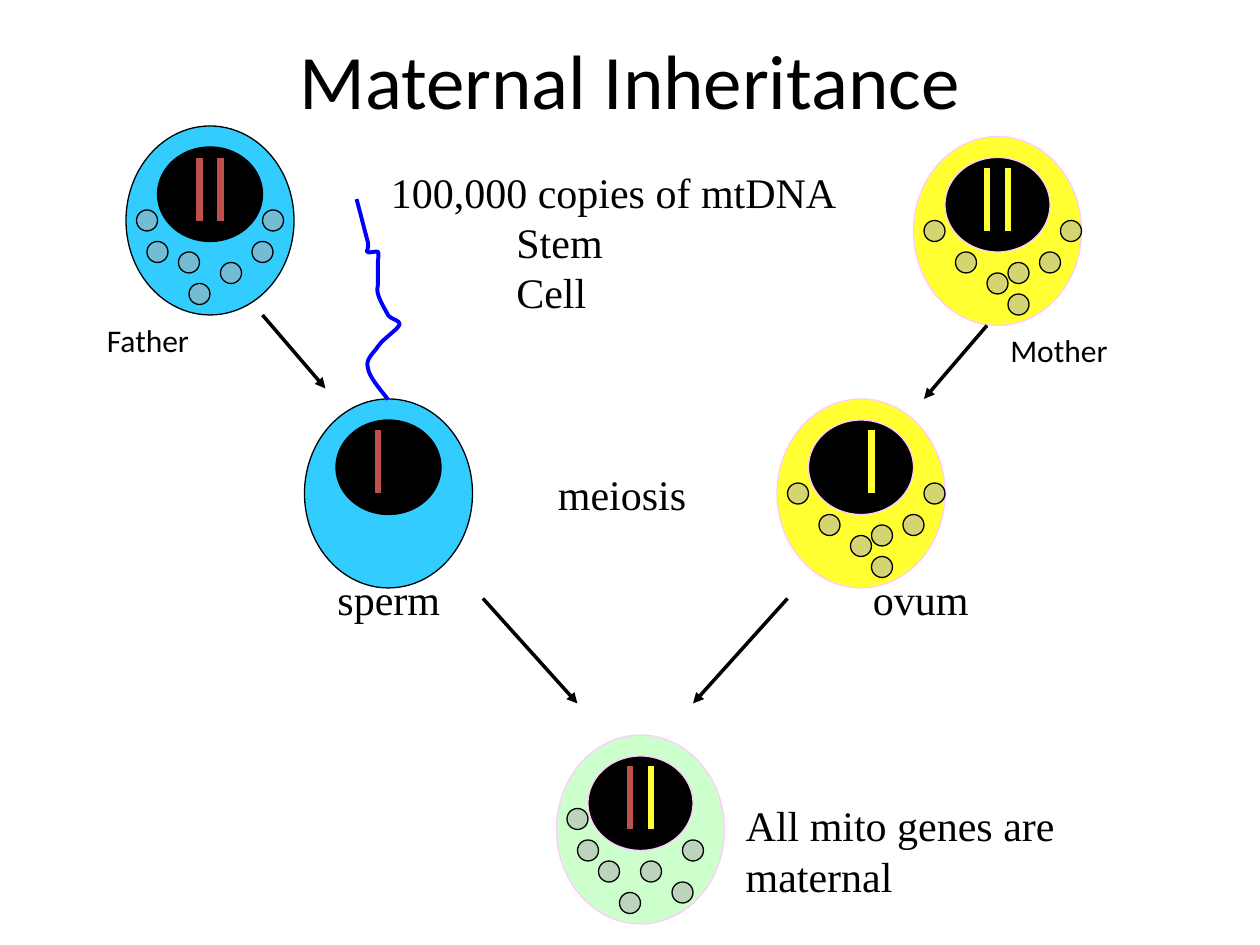
from lxml import etree
from pptx import Presentation
from pptx.dml.color import RGBColor
from pptx.enum.shapes import MSO_CONNECTOR, MSO_SHAPE
from pptx.enum.text import MSO_ANCHOR, PP_ALIGN
from pptx.oxml.ns import qn
from pptx.util import Inches, Pt

ELLIPSE = MSO_SHAPE.OVAL
STRAIGHT = MSO_CONNECTOR.STRAIGHT
CENTER, LEFT = PP_ALIGN.CENTER, PP_ALIGN.LEFT
MIDDLE = MSO_ANCHOR.MIDDLE

BLACK = RGBColor(0x00, 0x00, 0x00)
BLUE = RGBColor(0x33, 0xCC, 0xFF)
YELLOW = RGBColor(0xFF, 0xFF, 0x31)
GREEN = RGBColor(0xCC, 0xFF, 0xCC)
PINK = RGBColor(0xFF, 0xCC, 0xFF)
RED = RGBColor(0xC0, 0x50, 0x4D)
GREY = RGBColor(0xAE, 0xAE, 0xAE)
TAIL_BLUE = RGBColor(0x00, 0x00, 0xFF)

SERIF, SANS = "Times New Roman", "Calibri"

# Mitochondria offsets from the top left of their cell, in grid units
FATHER_MITOCHONDRIA = [(6, 15), (1, 8), (9, 13), (12, 11), (13, 8), (5, 12), (2, 11)]
MATERNAL_MITOCHONDRIA = [(14, 8), (1, 8), (9, 12), (9, 15), (12, 11), (7, 13), (4, 11)]
CHILD_MITOCHONDRIA = [(11, 14), (1, 7), (6, 15), (12, 10), (4, 12), (8, 12), (2, 10)]

# Left, top, fill, outline, chromosomes (offset, colour), mitochondria
CELLS = [
    (12, 12, BLUE, BLACK, [(7, RED), (9, RED)], FATHER_MITOCHONDRIA),
    (87, 13, YELLOW, PINK, [(7, YELLOW), (9, YELLOW)], MATERNAL_MITOCHONDRIA),
    (29, 38, BLUE, BLACK, [(7, RED)], []),
    (74, 38, YELLOW, PINK, [(9, YELLOW)], MATERNAL_MITOCHONDRIA),
    (53, 70, GREEN, PINK, [(7, RED), (9, YELLOW)], CHILD_MITOCHONDRIA),
]
ARROWS = [
    ((25, 30), (31, 37)),
    ((94, 31), (88, 38)),
    ((46, 57), (55, 67)),
    ((75, 57), (66, 67)),
]
# Bezier points in inches: a start, then three points for each curve
SPERM_TAIL = [
    (3.08, 3.17), (3.01, 3.08), (2.93, 2.99), (2.92, 2.92),
    (2.9, 2.85), (2.96, 2.81), (3, 2.75), (3.04, 2.69), (3.15, 2.62), (3.17, 2.58),
    (3.18, 2.54), (3.11, 2.54), (3.08, 2.5), (3.06, 2.46), (3.01, 2.38), (3, 2.33),
    (2.99, 2.29), (3, 2.28), (3, 2.25), (3, 2.22), (3, 2.19), (3, 2.17),
    (3, 2.14), (3, 2.11), (3, 2.08), (3, 2.06), (3.01, 2.01), (3, 2),
    (2.99, 1.99), (2.93, 2.01), (2.92, 2), (2.9, 1.99), (2.93, 1.99), (2.92, 1.92),
    (2.9, 1.85), (2.85, 1.65), (2.83, 1.58),
]
# Text, left, top, width, height
SERIF_LABELS = [
    ("Stem Cell", 4, 1.67, 1.52, 0.5),
    ("sperm", 2.58, 4.5, 1.02, 0.5),
    ("meiosis", 4.33, 3.67, 1.22, 0.5),
    ("ovum", 6.83, 4.5, 0.96, 0.5),
]
SANS_LABELS = [
    ("Mother", 7.92, 2.58, 0.98, 0.4),
    ("Father", 0.75, 2.5, 0.92, 0.4),
]


def grid(units):
    """Convert grid units of a twelfth of an inch to a length."""
    return Inches(units / 12)


def curve_points(controls, steps=8):
    """Sample a chain of cubic Bezier curves."""
    points = [controls[0]]
    for index in range(0, len(controls) - 1, 3):
        curve = controls[index:index + 4]
        for step in range(1, steps + 1):
            t = step / steps
            weights = ((1 - t) ** 3, 3 * t * (1 - t) ** 2, 3 * t * t * (1 - t), t ** 3)
            points.append(tuple(
                sum(weight * point[axis] for weight, point in zip(weights, curve))
                for axis in (0, 1)
            ))
    return points


class InheritanceDiagram:
    def __init__(self, slide):
        self.slide = slide
        self.shapes = slide.shapes

    def title(self, text):
        title = self.shapes.title
        title.left, title.top = Inches(0.5), Inches(0)
        title.width, title.height = Inches(9), Inches(1.25)
        title.text_frame.vertical_anchor = MIDDLE
        self.set_text(title.text_frame, text, SANS, 44, CENTER)

    def set_text(self, frame, text, font, size, align):
        frame.text = text
        paragraph = frame.paragraphs[0]
        paragraph.alignment = align
        paragraph.font.name = font
        paragraph.font.size = Pt(size)
        paragraph.font.color.rgb = BLACK

    def label(self, text, left, top, width, height,
              font=SERIF, size=24, align=LEFT, wrap=False):
        box = self.shapes.add_textbox(
            Inches(left), Inches(top), Inches(width), Inches(height))
        box.text_frame.word_wrap = wrap
        self.set_text(box.text_frame, text, font, size, align)

    def ellipse(self, left, top, width, height, fill, outline):
        shape = self.shapes.add_shape(
            ELLIPSE, grid(left), grid(top), grid(width), grid(height))
        shape.shadow.inherit = False
        shape.fill.solid()
        shape.fill.fore_color.rgb = fill
        shape.line.color.rgb = outline
        shape.line.width = Pt(0.75)
        return shape

    def line(self, start, end, color, width):
        connector = self.shapes.add_connector(
            STRAIGHT, *(grid(value) for value in (*start, *end)))
        connector.line.color.rgb = color
        connector.line.width = Pt(width)
        etree.SubElement(connector._element.spPr, qn("a:effectLst"))
        return connector

    def arrow(self, start, end):
        connector = self.line(start, end, BLACK, 2)
        outline = connector._element.spPr.find(qn("a:ln"))
        etree.SubElement(outline, qn("a:tailEnd"), type="triangle")

    def mitochondrion(self, left, top):
        shape = self.ellipse(left, top, 2, 2, GREY, BLACK)
        color = shape._element.spPr.find(qn("a:solidFill"))[0]
        etree.SubElement(color, qn("a:alpha"), val="53000")

    def cell(self, left, top, fill, outline, chromosomes, mitochondria):
        self.ellipse(left, top, 16, 18, fill, outline)
        self.ellipse(left + 3, top + 2, 10, 9, BLACK, outline)
        for offset, color in chromosomes:
            x = left + offset
            self.line((x, top + 3), (x, top + 9), color, 3.5)
        for across, down in mitochondria:
            self.mitochondrion(left + across, top + down)

    def curve(self, controls, color, width):
        start, *points = [(Inches(x), Inches(y)) for x, y in curve_points(controls)]
        builder = self.shapes.build_freeform(*start)
        builder.add_line_segments(points, close=False)
        shape = builder.convert_to_shape()
        shape.shadow.inherit = False
        shape.fill.background()
        shape.line.color.rgb = color
        shape.line.width = Pt(width)


def main():
    presentation = Presentation()
    presentation.slide_width, presentation.slide_height = Inches(10), Inches(7.5)
    title_only = presentation.slide_layouts[5]
    diagram = InheritanceDiagram(presentation.slides.add_slide(title_only))

    diagram.title("Maternal Inheritance")
    for cell in CELLS:
        diagram.cell(*cell)
    for start, end in ARROWS:
        diagram.arrow(start, end)
    diagram.curve(SPERM_TAIL, TAIL_BLUE, 2.25)

    diagram.label("100,000 copies of mtDNA", 3, 1.27, 3.74, 0.5, align=CENTER)
    for label in SERIF_LABELS:
        diagram.label(*label)
    for label in SANS_LABELS:
        diagram.label(*label, font=SANS, size=18)
    diagram.label("All mito genes are maternal", 5.82, 6.3, 2.9, 0.9, wrap=True)

    presentation.save("out.pptx")


if __name__ == "__main__":
    main()
